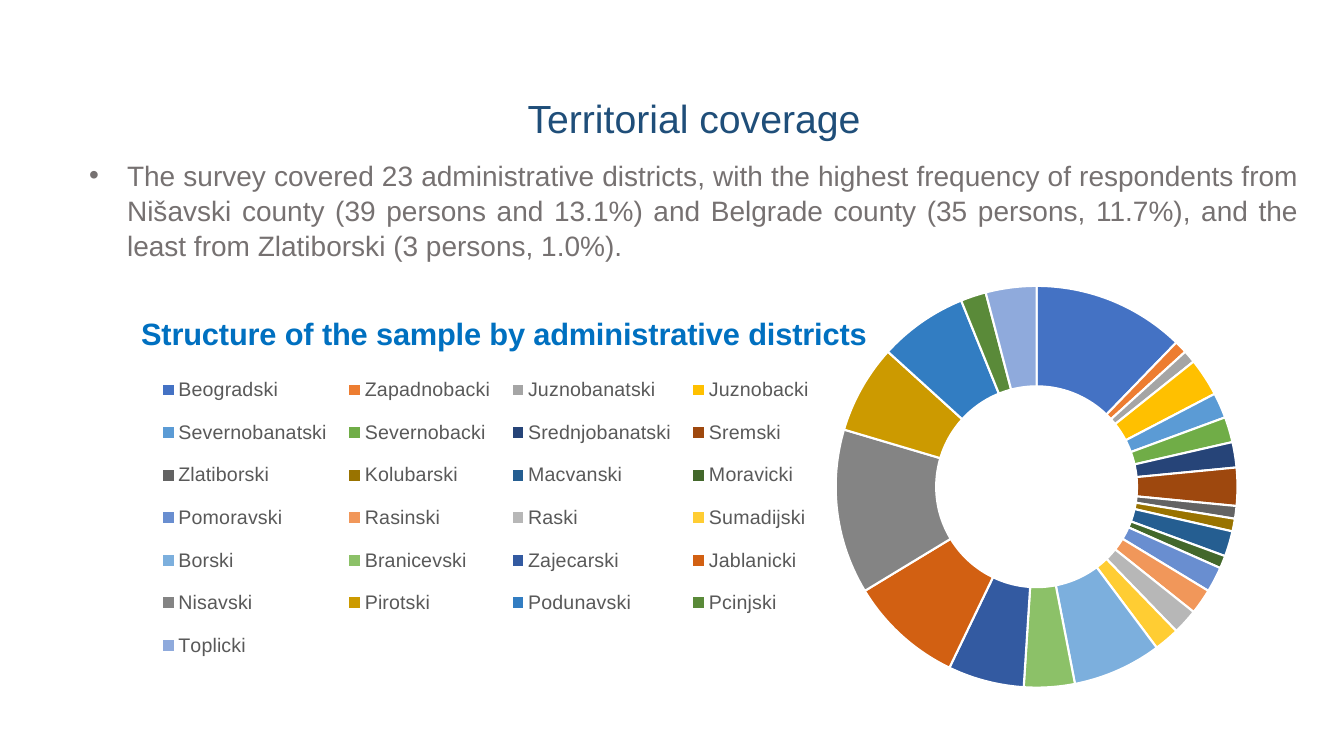
from lxml import etree
from pptx import Presentation
from pptx.chart.data import CategoryChartData as ChartData
from pptx.dml.color import RGBColor as RGB
from pptx.enum.chart import XL_CHART_TYPE as Kind, XL_LEGEND_POSITION as Side
from pptx.enum.text import MSO_ANCHOR as Anchor, PP_ALIGN as Align
from pptx.oxml.ns import qn
from pptx.util import Pt

PX = 12192000 / 1344
FACE = "Arial"
NAVY = RGB(0x1F, 0x4E, 0x79)
GRAY = RGB(0x76, 0x71, 0x71)
BLUE = RGB(0x00, 0x70, 0xC0)
DARK = RGB(0x59, 0x59, 0x59)
BLACK = RGB(0, 0, 0)
WHITE = RGB(0xFF, 0xFF, 0xFF)

TITLE = (190, 82, 1008, 77)
BODY = (89, 157, 1210, 139)
CHART = (124, 284, 1148, 414)

SHARES = [
    ("Beogradski", 12, RGB(0x44, 0x72, 0xC4)),
    ("Zapadnobacki", 1, RGB(0xED, 0x7D, 0x31)),
    ("Juznobanatski", 1, RGB(0xA5, 0xA5, 0xA5)),
    ("Juznobacki", 3, RGB(0xFF, 0xC0, 0x00)),
    ("Severnobanatski", 2, RGB(0x5B, 0x9B, 0xD5)),
    ("Severnobacki", 2, RGB(0x70, 0xAD, 0x47)),
    ("Srednjobanatski", 2, RGB(0x26, 0x44, 0x78)),
    ("Sremski", 3, RGB(0x9E, 0x48, 0x0E)),
    ("Zlatiborski", 1, RGB(0x63, 0x63, 0x63)),
    ("Kolubarski", 1, RGB(0x99, 0x73, 0x00)),
    ("Macvanski", 2, RGB(0x25, 0x5E, 0x91)),
    ("Moravicki", 1, RGB(0x43, 0x68, 0x2B)),
    ("Pomoravski", 2, RGB(0x69, 0x8E, 0xD0)),
    ("Rasinski", 2, RGB(0xF1, 0x97, 0x5A)),
    ("Raski", 2, RGB(0xB7, 0xB7, 0xB7)),
    ("Sumadijski", 2, RGB(0xFF, 0xCD, 0x33)),
    ("Borski", 7, RGB(0x7C, 0xAF, 0xDD)),
    ("Branicevski", 4, RGB(0x8C, 0xC1, 0x68)),
    ("Zajecarski", 6, RGB(0x33, 0x5A, 0xA1)),
    ("Jablanicki", 9, RGB(0xD2, 0x60, 0x12)),
    ("Nisavski", 13, RGB(0x84, 0x84, 0x84)),
    ("Pirotski", 7, RGB(0xCC, 0x9A, 0x00)),
    ("Podunavski", 7, RGB(0x32, 0x7D, 0xC2)),
    ("Pcinjski", 2, RGB(0x5A, 0x8A, 0x39)),
    ("Toplicki", 4, RGB(0x8F, 0xAA, 0xDC)),
]


def px(n):
    return round(n * PX)


def style(font, size, color, bold=False):
    font.name, font.size, font.bold = FACE, Pt(size), bold
    font.color.rgb = color


def fill(holder, box, text, size, color):
    """Move a placeholder to box, set its text and return the paragraph."""
    holder.left, holder.top, holder.width, holder.height = map(px, box)
    frame = holder.text_frame
    frame.margin_left = frame.margin_right = 0
    frame.margin_top = frame.margin_bottom = 0
    frame.word_wrap = True
    frame.text = text
    para = frame.paragraphs[0]
    para.space_before = Pt(0)
    style(para.font, size, color)
    return para


def add_title(slide, box):
    holder = slide.shapes.title
    para = fill(holder, box, "Territorial coverage", 28, NAVY)
    holder.text_frame.vertical_anchor = Anchor.MIDDLE
    para.alignment = Align.CENTER
    para.line_spacing = 0.9


def add_body(slide, box):
    holder = slide.placeholders[1]
    para = fill(holder, box, (
        "The survey covered 23 administrative districts, with the highest "
        "frequency of respondents from Nišavski county (39 persons and 13.1%) "
        "and Belgrade county (35 persons, 11.7%), and the least from "
        "Zlatiborski (3 persons, 1.0%)."), 20, GRAY)
    holder.text_frame.vertical_anchor = Anchor.TOP
    para.alignment = Align.JUSTIFY
    para.line_spacing = 1.04
    props = para.font._element.getparent()
    props.set("marL", str(px(38)))
    props.set("indent", str(px(-38)))


def place(part, at, box, inner=False):
    """Give a chart part a manual layout, as shares of the chart's size."""
    for old in part.findall(qn("c:layout")):
        part.remove(old)
    layout = etree.Element(qn("c:layout"))
    manual = etree.SubElement(layout, qn("c:manualLayout"))
    rows = [("layoutTarget", "inner")] if inner else []
    rows += [("xMode", "edge"), ("yMode", "edge"), *zip("xywh", box)]
    for tag, val in rows:
        etree.SubElement(manual, qn("c:" + tag)).set("val", str(val))
    part.insert(at, layout)


def add_ring(slide, box):
    names, vals, colors = zip(*SHARES)
    data = ChartData()
    data.categories = names
    data.add_series("Series 1", vals)
    chart = slide.shapes.add_chart(
        Kind.DOUGHNUT, *map(px, box), data).chart
    style(chart.font, 10, BLACK)

    chart.has_title = True
    frame = chart.chart_title.text_frame
    frame.text = "Structure of the sample by administrative districts"
    style(frame.paragraphs[0].font, 22, BLUE, True)

    chart.has_legend = True
    chart.legend.position = Side.BOTTOM
    chart.legend.include_in_layout = False
    style(chart.legend.font, 14, DARK)

    plot = chart.plots[0]
    plot.vary_by_categories = True
    ring = plot.series[0]
    for i, color in enumerate(colors):
        form = ring.points[i].format
        form.fill.solid()
        form.fill.fore_color.rgb = color
        form.line.color.rgb = WHITE
        form.line.width = Pt(1.5)

    root = chart._chartSpace
    root.xpath(".//c:holeSize")[0].set("val", "75")
    place(root.xpath("c:chart/c:title")[0], 1, (0.01, 0.06))
    place(root.xpath("c:chart/c:legend")[0], 1, (0.02, 0.18, 0.59, 0.77))
    place(root.xpath("c:chart/c:plotArea")[0], 0,
          (0.62, 0, 0.35, 0.98), True)


def main():
    deck = Presentation()
    deck.slide_width, deck.slide_height = px(1344), px(756)
    slide = deck.slides.add_slide(deck.slide_layouts[1])
    add_title(slide, TITLE)
    add_body(slide, BODY)
    add_ring(slide, CHART)
    deck.save("out.pptx")


if __name__ == "__main__":
    main()
